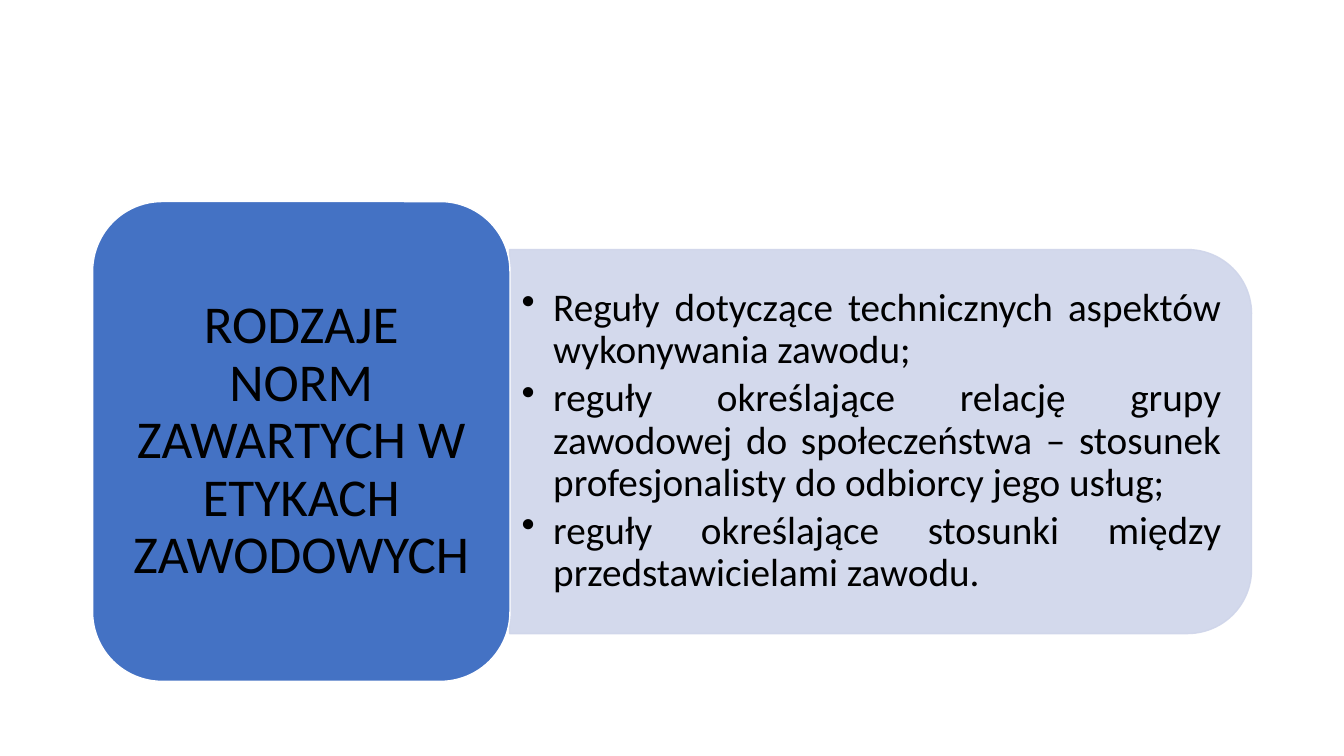
import pptx
import pptx.util
import pptx.dml.color
import pptx.enum.shapes
import pptx.enum.text
import pptx.oxml
import pptx.oxml.ns
import lxml.etree

Pt = pptx.util.Pt
Kind = pptx.enum.shapes.MSO_SHAPE
Align = pptx.enum.text.PP_ALIGN


def paint(form, color):
    form.solid()
    form.fore_color.rgb = pptx.dml.color.RGBColor.from_string(color)


def write(shape, texts, size, align, pad, after=0, indent=0):
    frame = shape.text_frame
    frame.word_wrap = True
    frame.vertical_anchor = pptx.enum.text.MSO_ANCHOR.MIDDLE
    frame.margin_left = frame.margin_right = Pt(pad)
    frame.margin_top = frame.margin_bottom = Pt(pad / 2)
    for num, text in enumerate(texts):
        para = frame.add_paragraph() if num else frame.paragraphs[0]
        para.alignment = align
        para.line_spacing = 0.9
        para.space_after = Pt(after)
        run = para.add_run()
        run.text = text
        run.font.size = Pt(size)
        run.font.name = "Calibri"
        paint(run.font.fill, "000000")
        if indent:
            props = para._p.get_or_add_pPr()
            props.set("marL", str(Pt(indent)))
            props.set("indent", str(-Pt(indent)))
            mark = lxml.etree.SubElement(props, pptx.oxml.ns.qn("a:buChar"))
            mark.set("char", "•")


deck = pptx.Presentation()
deck.slide_width = Pt(960)
deck.slide_height = Pt(540)
slide = deck.slides.add_slide(deck.slide_layouts[6])
shapes = slide.shapes

panel = shapes.add_shape(Kind.ROUND_2_SAME_RECTANGLE, Pt(491.8), Pt(50.4), Pt(274.3), Pt(530))
panel.rotation = 90
card = shapes.add_shape(Kind.ROUNDED_RECTANGLE, Pt(66.2), Pt(144), Pt(298.1), Pt(342.7))

for shape, fill, edge in [(panel, "CFD5EA", "CFD5EA"), (card, "4472C4", "FFFFFF")]:
    shape.shadow.inherit = False
    paint(shape.fill, fill)
    paint(shape.line.fill, edge)
    shape.line.width = Pt(1)

for tint in panel._element.spPr.iter(pptx.oxml.ns.qn("a:srgbClr")):
    alpha = lxml.etree.SubElement(tint, pptx.oxml.ns.qn("a:alpha"))
    alpha.set("val", "90000")

rules = [
    "Reguły dotyczące technicznych aspektów wykonywania zawodu;",
    "reguły określające relację grupy zawodowej do społeczeństwa – stosunek profesjonalisty do odbiorcy jego usług;",
    "reguły określające stosunki między przedstawicielami zawodu.",
]
body = shapes.add_textbox(Pt(364.3), Pt(191.5), Pt(516.3), Pt(247.7))
write(body, rules, 28, Align.JUSTIFY, 8.4, after=4, indent=22.5)
write(card, ["RODZAJE NORM ZAWARTYCH W ETYKACH ZAWODOWYCH"], 38, Align.CENTER, 11.4)

deck.save("out.pptx")
